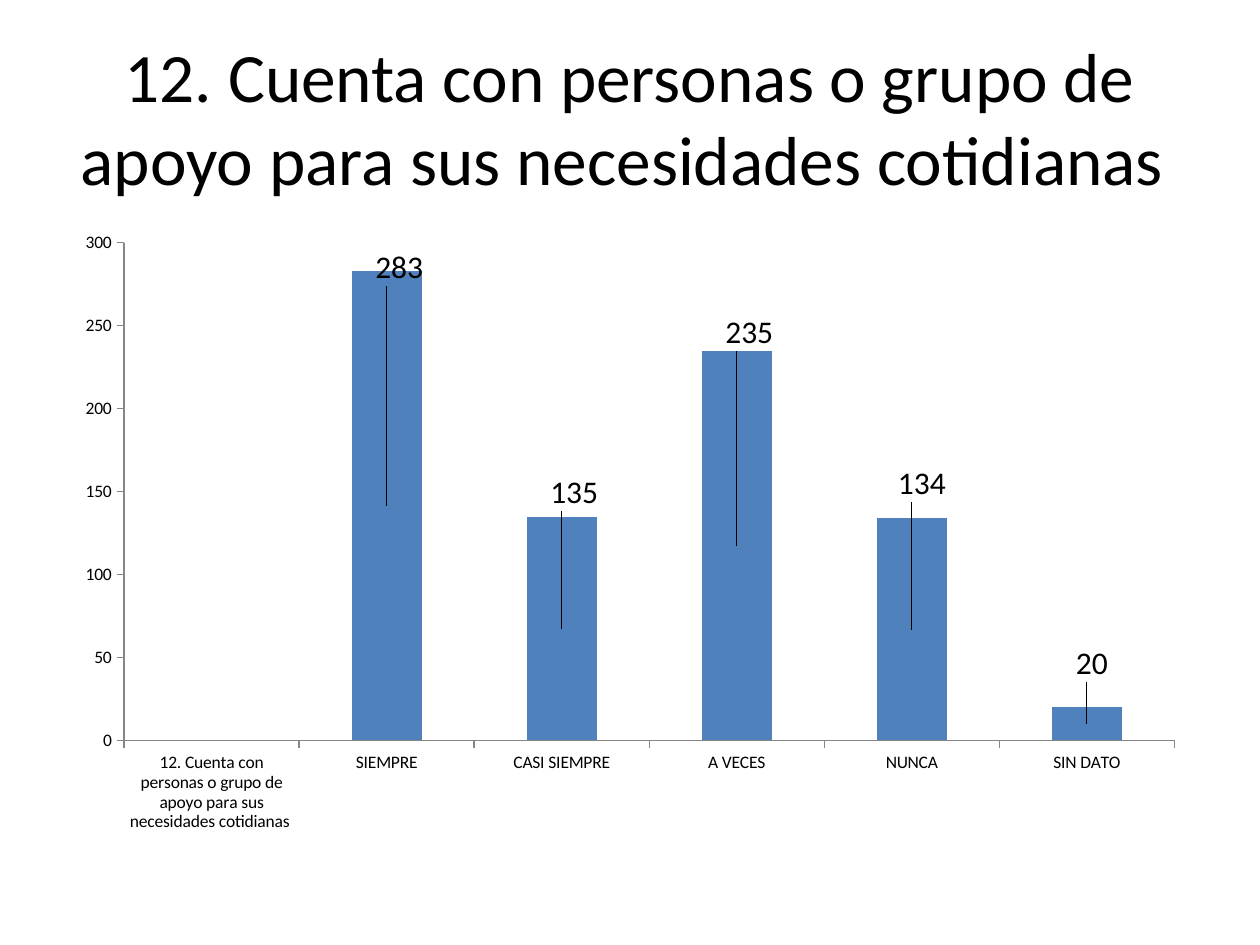
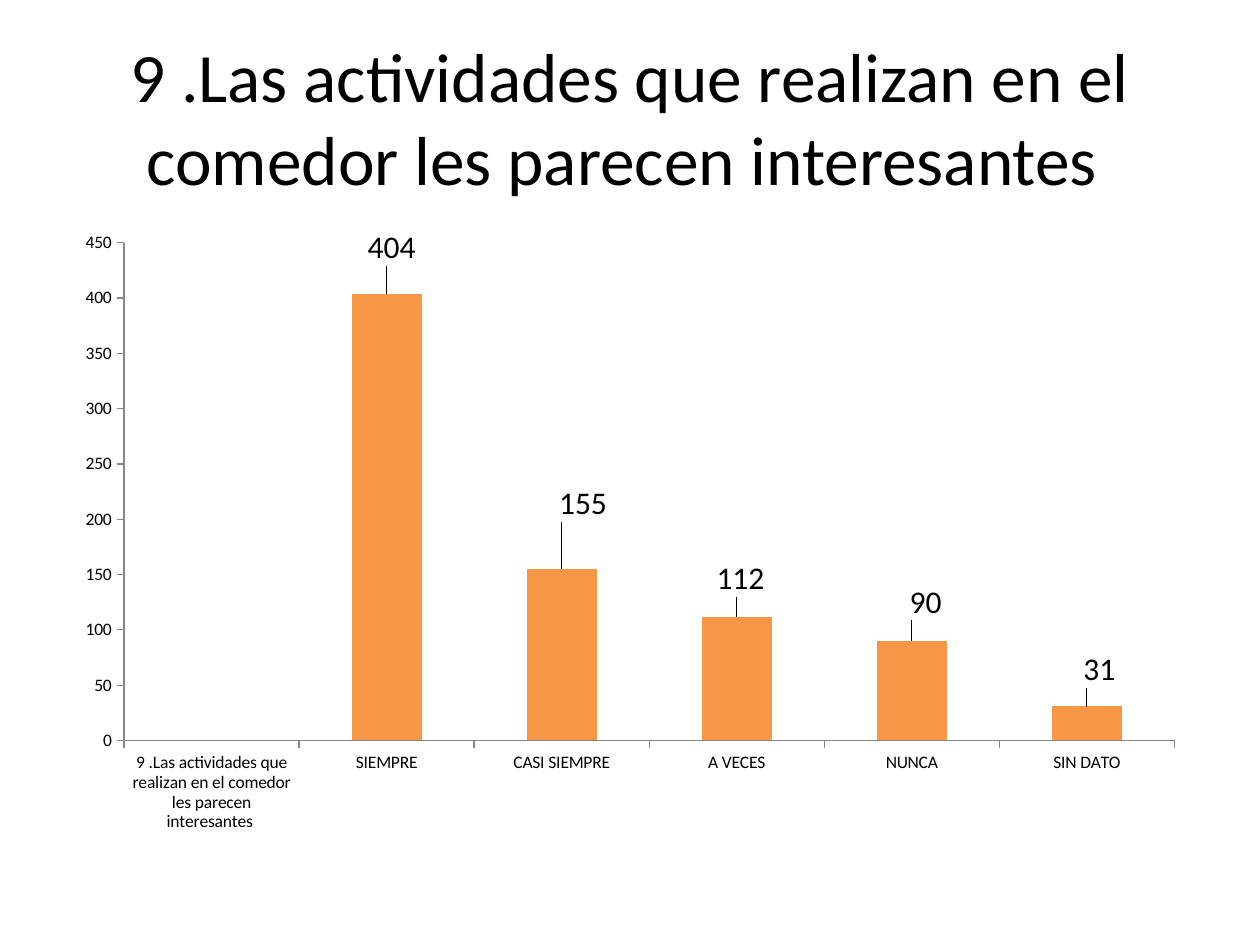
from lxml import etree
from pptx import Presentation
from pptx.chart.data import CategoryChartData
from pptx.dml.color import RGBColor
from pptx.enum.chart import XL_CHART_TYPE, XL_LABEL_POSITION, XL_TICK_MARK
from pptx.enum.text import MSO_ANCHOR, MSO_AUTO_SIZE, PP_ALIGN
from pptx.oxml.ns import qn
from pptx.util import Inches, Pt

STACK, CLUSTER = XL_CHART_TYPE.COLUMN_STACKED, XL_CHART_TYPE.COLUMN_CLUSTERED
MID, END = XL_LABEL_POSITION.CENTER, XL_LABEL_POSITION.OUTSIDE_END
OUT, NONE = XL_TICK_MARK.OUTSIDE, XL_TICK_MARK.NONE

FONT = "Calibri"
BLACK, GREY, BLUE, ORANGE = "000000", "868686", "4F81BD", "F79646"
TITLE_BOX = (0.5, 0.3, 9, 1.25)
CHART_BOX = (0.5, 1.75, 9, 4.95)
ANSWERS = ["SIEMPRE", "CASI SIEMPRE", "A VECES", "NUNCA", "SIN DATO"]

SLIDES = [
    dict(text="12. Cuenta con personas o grupo de apoyo para sus necesidades cotidianas ",
         kind=STACK, place=MID, color=BLUE, top=300,
         counts=[283, 135, 235, 134, 20],
         shifts=[(0.1, -1.89), (0.1, -1.08), (0.1, -1.69), (0.08, -1.16), (0.04, -0.48)]),
    dict(text="9 .Las actividades que realizan en el comedor les parecen interesantes ",
         kind=CLUSTER, place=END, color=ORANGE, top=450,
         counts=[404, 155, 112, 90, 31],
         shifts=[(0.04, -0.18), (0.17, -0.33), (0.03, -0.11), (0.11, -0.12), (0.1, -0.1)]),
]


def style(font, size):
    """Give a font the shared face and colour."""
    font.name, font.size = FONT, Pt(size)
    font.color.rgb = RGBColor.from_string(BLACK)


def add_title(slide, box, text):
    """Place and fill the title."""
    title = slide.shapes.title
    title.left, title.top, title.width, title.height = map(Inches, box)
    frame = title.text_frame
    frame.word_wrap, frame.auto_size = True, MSO_AUTO_SIZE.NONE
    frame.vertical_anchor = MSO_ANCHOR.MIDDLE
    para = frame.paragraphs[0]
    para.alignment = PP_ALIGN.CENTER
    run = para.add_run()
    run.text = text
    style(run.font, 39.6)


def set_axes(chart, top):
    """Format both axes."""
    for axis in (chart.category_axis, chart.value_axis):
        axis.has_major_gridlines = False
        axis.major_tick_mark, axis.minor_tick_mark = OUT, NONE
        axis.format.line.color.rgb = RGBColor.from_string(GREY)
    scale = chart.value_axis
    scale.minimum_scale, scale.maximum_scale, scale.major_unit = 0, top, 50


def set_labels(chart, box, place, shifts):
    """Show the values, each moved by its shift in inches."""
    series = chart.plots[0].series[0]
    series.data_labels.show_value = True
    style(series.data_labels.font, 18)
    for index in range(len(shifts)):
        label = series.points[index + 1].data_label
        style(label.font, 18)
        label.position = place
    for node, shift in zip(chart.element.xpath("//c:dLbl"), shifts):
        layout = etree.Element(qn("c:layout"))
        manual = etree.SubElement(layout, qn("c:manualLayout"))
        for axis, move, size in zip("xy", shift, box[2:]):
            etree.SubElement(manual, qn(f"c:{axis}")).set("val", str(move / size))
        node.insert(1, layout)


def add_bars(slide, box, text, kind, place, color, top, counts, shifts):
    """Draw the column chart of answers."""
    data = CategoryChartData()
    data.categories = [text] + ANSWERS
    data.add_series("Series 1", [None] + counts)
    chart = slide.shapes.add_chart(kind, *map(Inches, box), data).chart
    chart.has_legend = chart.has_title = False
    style(chart.font, 10)
    plot = chart.plots[0]
    plot.vary_by_categories = False
    plot.gap_width = 150
    plot.overlap = 100 if kind == STACK else 0
    fill = plot.series[0].format.fill
    fill.solid()
    fill.fore_color.rgb = RGBColor.from_string(color)
    set_axes(chart, top)
    set_labels(chart, box, place, shifts)


def main():
    """Build and save the deck."""
    deck = Presentation()
    deck.slide_width, deck.slide_height = Inches(10), Inches(7.5)
    for item in SLIDES:
        slide = deck.slides.add_slide(deck.slide_layouts[5])
        add_title(slide, TITLE_BOX, item["text"])
        add_bars(slide, CHART_BOX, **item)
    deck.save("out.pptx")


if __name__ == "__main__":
    main()
